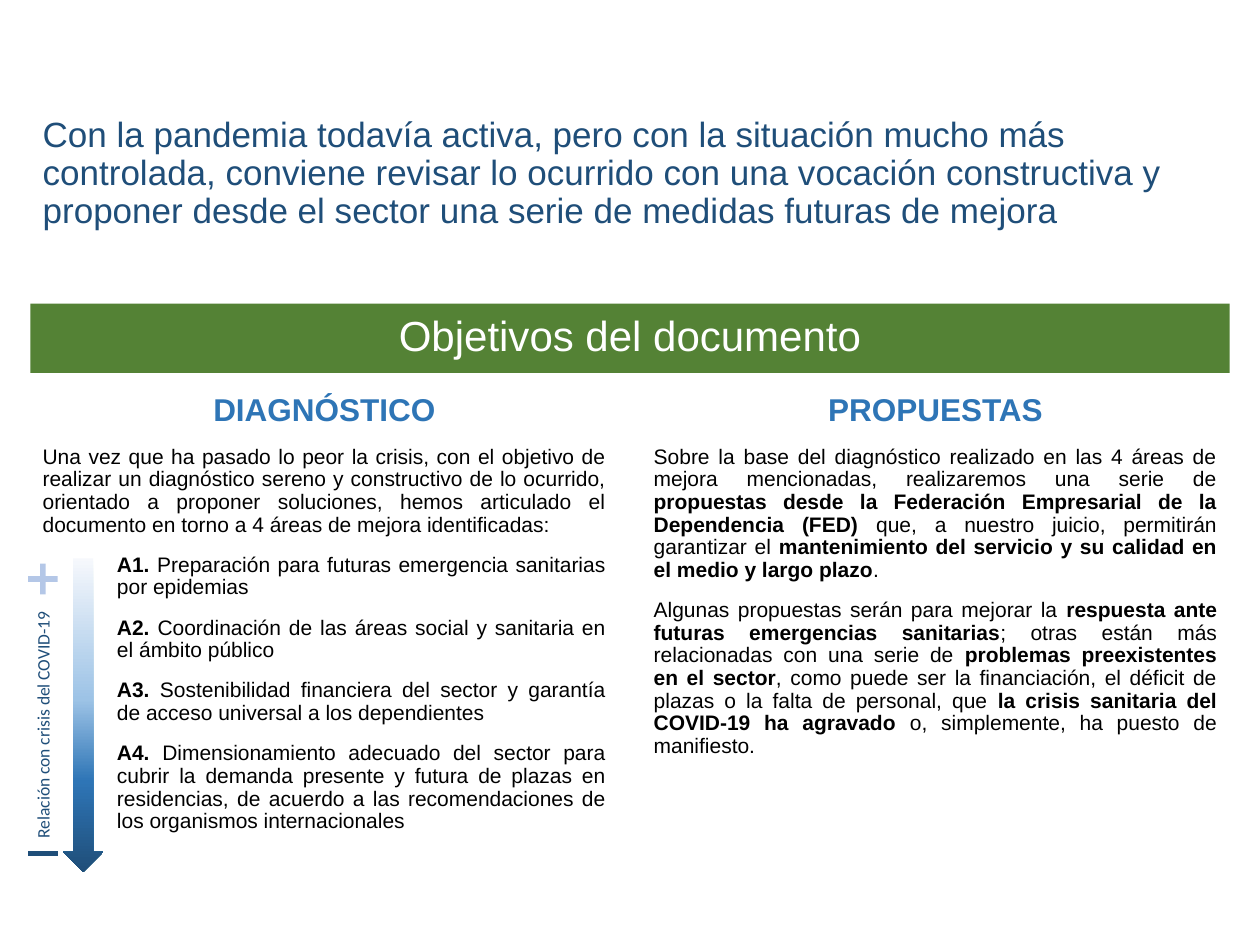
"""Builds the slide on the document's goals: diagnosis on the left, proposals on the right."""
import dataclasses

import pptx
import pptx.dml.color
import pptx.enum.shapes
import pptx.enum.text
import pptx.oxml
import pptx.oxml.ns
import pptx.util

Pt = pptx.util.Pt
Rgb = pptx.dml.color.RGBColor.from_string
Align = pptx.enum.text.PP_ALIGN
Anchor = pptx.enum.text.MSO_ANCHOR
Shape = pptx.enum.shapes.MSO_SHAPE


@dataclasses.dataclass(frozen=True)
class Theme:
    font: str = "Arial"
    label_font: str = "Calibri"
    green: str = "548235"
    navy: str = "1F4E79"
    blue: str = "2E75B6"
    pale_blue: str = "B4C7E7"
    white: str = "FFFFFF"
    black: str = "000000"
    fade: tuple = ((0, "F6F8FC"), (45, "9DC3E6"), (71, "2E75B6"), (100, "1F4E79"))
    banner_size: int = 24
    title_size: int = 20
    heading_size: int = 18
    body_size: int = 12
    label_size: int = 10


theme = Theme()


def write(frame, text, *, size, color, font=theme.font, bold=False, align=Align.LEFT,
          spacing=0.9, before=0, indent=0, anchor=Anchor.TOP, wrap=True):
    """Adds a paragraph to the frame; parts between ** marks are bold."""
    frame.word_wrap = wrap
    frame.vertical_anchor = anchor
    paragraph = frame.add_paragraph() if frame.text else frame.paragraphs[0]
    paragraph.alignment = align
    paragraph.line_spacing = spacing
    paragraph.space_before = Pt(before)
    if indent:
        properties = paragraph._p.get_or_add_pPr()
        properties.set("marL", str(Pt(indent)))
        properties.set("indent", "0")
    for position, part in enumerate(text.split("**")):
        if part:
            run = paragraph.add_run()
            run.text = part
            run.font.name = font
            run.font.size = Pt(size)
            run.font.bold = bold or position % 2 == 1
            run.font.color.rgb = Rgb(color)


def add_block(kind, left, top, width, height, color):
    """Adds a flat preset shape without outline or shadow."""
    block = slide.shapes.add_shape(kind, Pt(left), Pt(top), Pt(width), Pt(height))
    block.shadow.inherit = False
    block.line.fill.background()
    block.fill.solid()
    block.fill.fore_color.rgb = Rgb(color)
    return block


presentation = pptx.Presentation()
presentation.slide_width, presentation.slide_height = Pt(720), Pt(540)
slide = presentation.slides.add_slide(presentation.slide_layouts[6])

margin = 17.3
content_width = 720 - 2 * margin
column_width = 336.2

banner = add_block(Shape.RECTANGLE, margin, 173.5, content_width, 39.6, theme.green)
write(banner.text_frame, "Objetivos del documento", size=theme.banner_size,
      color=theme.white, align=Align.CENTER, anchor=Anchor.MIDDLE)

title = slide.shapes.add_textbox(Pt(margin), Pt(41.8), Pt(content_width), Pt(115.2))
write(title.text_frame,
      "Con la pandemia todavía activa, pero con la situación mucho más controlada, "
      "conviene revisar lo ocurrido con una vocación constructiva y proponer desde el "
      "sector una serie de medidas futuras de mejora",
      size=theme.title_size, color=theme.navy, anchor=Anchor.MIDDLE)

columns = [
    (margin, "DIAGNÓSTICO", [
        ("Una vez que ha pasado lo peor la crisis, con el objetivo de realizar un "
         "diagnóstico sereno y constructivo de lo ocurrido, orientado a proponer "
         "soluciones, hemos articulado el documento en torno a 4 áreas de mejora "
         "identificadas:", 0),
        ("**A1. **Preparación para futuras emergencia sanitarias por epidemias", 42.5),
        ("**A2. **Coordinación de las áreas social y sanitaria en el ámbito público", 42.5),
        ("**A3. **Sostenibilidad financiera del sector y garantía de acceso universal "
         "a los dependientes", 42.5),
        ("**A4. **Dimensionamiento adecuado del sector para cubrir la demanda presente y "
         "futura de plazas en residencias, de acuerdo a las recomendaciones de los "
         "organismos internacionales", 42.5),
    ]),
    (720 - margin - column_width, "PROPUESTAS", [
        ("Sobre la base del diagnóstico realizado en las 4 áreas de mejora mencionadas, "
         "realizaremos una serie de **propuestas desde la Federación Empresarial de la "
         "Dependencia (FED)** que, a nuestro juicio, permitirán garantizar el "
         "**mantenimiento del servicio y su calidad en el medio y largo plazo**.", 0),
        ("Algunas propuestas serán para mejorar la **respuesta ante futuras emergencias "
         "sanitarias**; otras están más relacionadas con una serie de **problemas "
         "preexistentes en el sector**, como puede ser la financiación, el déficit de "
         "plazas o la falta de personal, que **la crisis sanitaria del COVID-19 ha "
         "agravado **o, simplemente, ha puesto de manifiesto.", 0),
    ]),
]
for left, heading, statements in columns:
    column = slide.shapes.add_textbox(Pt(left), Pt(221.8), Pt(column_width), Pt(277.2))
    write(column.text_frame, heading, size=theme.heading_size, color=theme.blue,
          bold=True, align=Align.CENTER)
    for statement, indent in statements:
        write(column.text_frame, statement, size=theme.body_size, color=theme.black,
              align=Align.JUSTIFY, before=10, indent=indent)

relation_arrow = add_block(Shape.DOWN_ARROW, 36, 319, 23, 179.3, theme.navy)
relation_arrow.fill.gradient()
relation_arrow.fill.gradient_angle = 270
stops = relation_arrow._element.spPr.find(".//" + pptx.oxml.ns.qn("a:gsLst"))
for stop in list(stops):
    stops.remove(stop)
for percent, color in theme.fade:
    stops.append(pptx.oxml.parse_xml(
        f'<a:gs {pptx.oxml.ns.nsdecls("a")} pos="{percent * 1000}">'
        f'<a:srgbClr val="{color}"/></a:gs>'))

plus = add_block(Shape.MATH_PLUS, 13, 319, 23, 23.8, theme.pale_blue)
plus.adjustments[0] = 0.14
add_block(Shape.MATH_MINUS, 13, 482.4, 23, 10.8, theme.navy)

relation = slide.shapes.add_textbox(Pt(-48.2), Pt(404.6), Pt(145.4), Pt(19.4))
relation.rotation = 270
write(relation.text_frame, "Relación con crisis del COVID-19", size=theme.label_size,
      color=theme.navy, font=theme.label_font, align=Align.CENTER, spacing=1.0, wrap=False)

presentation.save("out.pptx")
